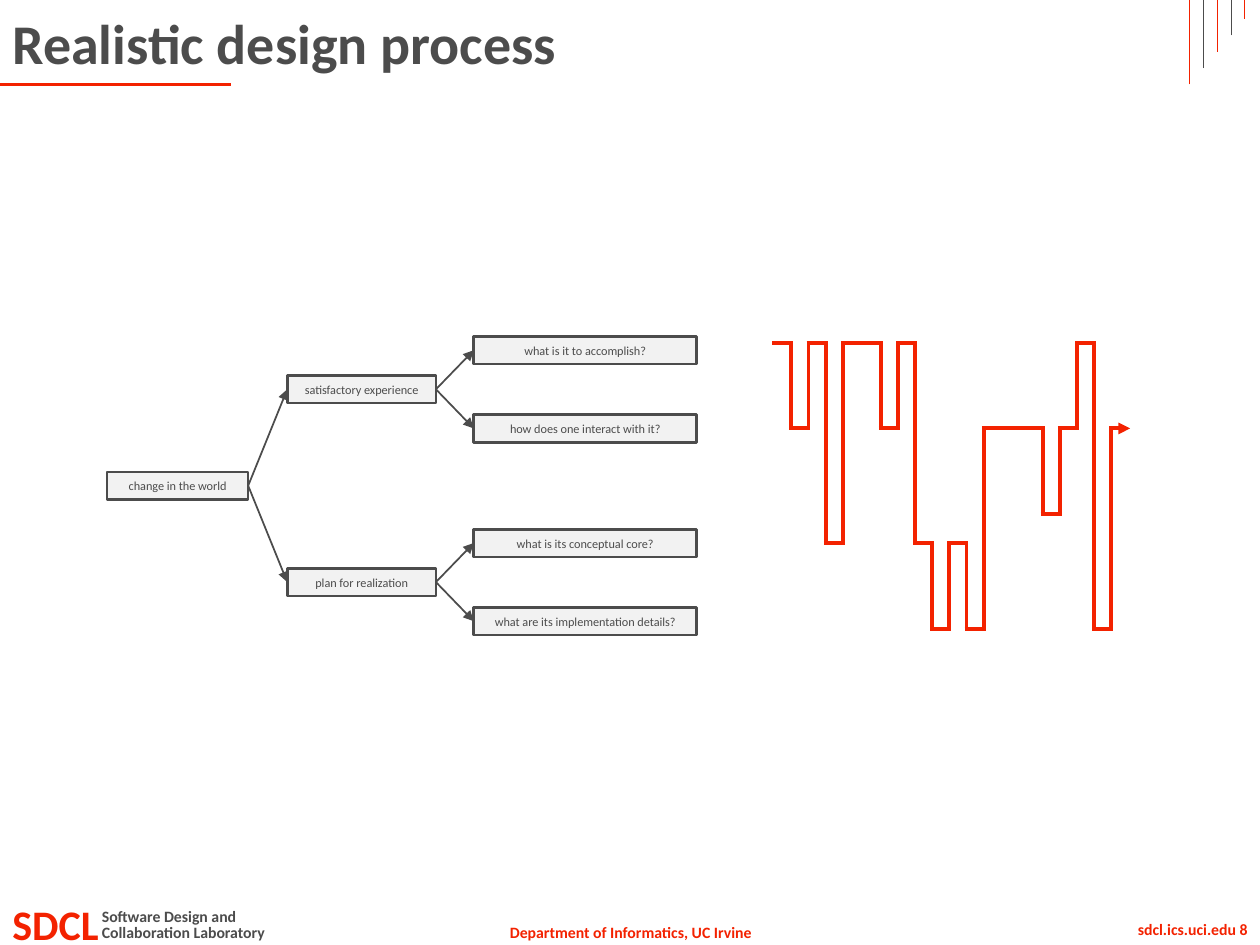
from lxml import etree
from pptx import Presentation
from pptx.dml.color import RGBColor
from pptx.enum.shapes import MSO_CONNECTOR, MSO_SHAPE
from pptx.enum.text import MSO_ANCHOR, MSO_AUTO_SIZE, PP_ALIGN
from pptx.oxml.ns import qn
from pptx.util import Inches, Pt

LEFT, CENTER, RIGHT = PP_ALIGN.LEFT, PP_ALIGN.CENTER, PP_ALIGN.RIGHT
MIDDLE, TOP = MSO_ANCHOR.MIDDLE, MSO_ANCHOR.TOP
STRAIGHT, RECTANGLE = MSO_CONNECTOR.STRAIGHT, MSO_SHAPE.RECTANGLE
GROW = MSO_AUTO_SIZE.SHAPE_TO_FIT_TEXT
LEFT_SIDE, RIGHT_SIDE = 1, 3

COLORS = {"red": "F32200", "gray": "4C4C4C", "pale": "F2F2F2"}
FONT = "Calibri"

# text, (left, top, width, height), size, color, alignment, anchor, wrap
LABELS = [
    ("Department of Informatics, UC Irvine", (3.93, 7.27, 2.15, 0.25), 9, "red", CENTER, TOP, False),
    ("SDCL", (0, 7.08, 1, 0.5), 24, "red", LEFT, TOP, True),
    ("Collaboration Laboratory", (0.71, 7.27, 1.53, 0.25), 9, "gray", LEFT, TOP, False),
    ("Software Design and", (0.71, 7.15, 1.29, 0.25), 9, "gray", LEFT, TOP, False),
    ("sdcl.ics.uci.edu 8", (7.84, 7.25, 2.16, 0.25), 9, "red", RIGHT, TOP, True),
    ("Realistic design process", (0, 0, 9, 0.67), 32, "gray", LEFT, MIDDLE, True),
]

CORNER_COLORS = ["red", "gray", "red", "gray", "red"]
CORNER_LEFT, CORNER_GAP = 9.44, 0.11
CORNER_HEIGHT, CORNER_DROP = 0.67, 0.13

# Each node is (text, children); each leaf has its top in LEAF_TOPS
DESIGN_TREE = ("change in the world", [
    ("satisfactory experience", [
        ("what is it to accomplish?", []),
        ("how does one interact with it?", []),
    ]),
    ("plan for realization", [
        ("what is its conceptual core?", []),
        ("what are its implementation details?", []),
    ]),
])
LEAF_TOPS = [2.67, 3.29, 4.2, 4.82]
TREE_COLUMNS = [(0.85, 1.12), (2.28, 1.18), (3.76, 1.77)]  # left, width
NODE_HEIGHT = 0.22

# Where the designer's attention is, step by step
LEVELS = {"goal": 2.72, "interaction": 3.4, "between": 4.08, "core": 4.31, "details": 4.99}
JOURNEY = [
    "goal", "interaction", "goal", "core", "goal", "goal", "interaction", "goal",
    "core", "details", "core", "details", "interaction", "interaction", "interaction",
    "between", "interaction", "goal", "details", "interaction",
]
JOURNEY_LEFT, JOURNEY_WIDTH, OVERLAP = 6.13, 2.84, 0.03


def rgb(name):
    return RGBColor.from_string(COLORS[name])


def write(shape, text, size, color, align, anchor, wrap, bold):
    frame = shape.text_frame
    frame_format = {"word_wrap": wrap, "auto_size": GROW, "vertical_anchor": anchor}
    for key, value in frame_format.items():
        setattr(frame, key, value)
    paragraph = frame.paragraphs[0]
    paragraph.alignment = align
    run = paragraph.add_run()
    run.text = text
    for key, value in {"name": FONT, "size": Pt(size), "bold": bold}.items():
        setattr(run.font, key, value)
    run.font.color.rgb = rgb(color)


def add_line(slide, start, end, color, width, arrow=False):
    line = slide.shapes.add_connector(STRAIGHT, *map(Inches, (*start, *end)))
    line.line.color.rgb = rgb(color)
    line.line.width = Pt(width)
    if arrow:
        etree.SubElement(line.line._get_or_add_ln(), qn("a:tailEnd"), type="triangle")
    etree.SubElement(line._element.spPr, qn("a:effectLst"))
    return line


def add_labels(slide):
    for text, place, size, color, align, anchor, wrap in LABELS:
        box = slide.shapes.add_textbox(*map(Inches, place))
        write(box, text, size, color, align, anchor, wrap, True)


def add_decoration(slide):
    add_line(slide, (0, 0.67), (1.83, 0.67), "red", 1.5)
    for i, color in enumerate(CORNER_COLORS):
        x = CORNER_LEFT + i * CORNER_GAP
        add_line(slide, (x, CORNER_HEIGHT - i * CORNER_DROP), (x, 0), color, 0.5)


def add_node(slide, node, leaf_tops, depth=0):
    """Draw a node midway between its first and last child; return box and top."""
    text, children = node
    branches = [add_node(slide, child, leaf_tops, depth + 1) for child in children]
    top = (branches[0][1] + branches[-1][1]) / 2 if branches else next(leaf_tops)
    left, width = TREE_COLUMNS[depth]
    box = slide.shapes.add_shape(RECTANGLE, *map(Inches, (left, top, width, NODE_HEIGHT)))
    box.shadow.inherit = False
    box.fill.solid()
    box.fill.fore_color.rgb = rgb("pale")
    box.line.color.rgb = rgb("gray")
    box.line.width = Pt(1.5)
    write(box, text, 7, "gray", CENTER, MIDDLE, True, False)
    for child_box, _ in branches:
        arrow = add_line(slide, (0, 0), (1, 1), "gray", 1, arrow=True)
        arrow.begin_connect(box, RIGHT_SIDE)
        arrow.end_connect(child_box, LEFT_SIDE)
    return box, top


def add_journey(slide):
    """Draw equal level strokes, overlapping by a line width where the level changes."""
    heights = [LEVELS[name] for name in JOURNEY]
    changes = sum(a != b for a, b in zip(heights, heights[1:]))
    stroke = (JOURNEY_WIDTH + changes * OVERLAP) / len(heights)
    x, previous = JOURNEY_LEFT, heights[0]
    for i, y in enumerate(heights):
        if y != previous:
            x -= OVERLAP
            riser = x + OVERLAP / 2
            add_line(slide, (riser, min(previous, y)), (riser, max(previous, y)), "red", 2.25)
        add_line(slide, (x, y), (x + stroke, y), "red", 2.25, arrow=i == len(heights) - 1)
        x, previous = x + stroke, y


def main():
    deck = Presentation()
    deck.slide_width, deck.slide_height = Inches(10), Inches(7.5)
    slide = deck.slides.add_slide(deck.slide_layouts[6])
    add_decoration(slide)
    add_labels(slide)
    add_node(slide, DESIGN_TREE, iter(LEAF_TOPS))
    add_journey(slide)
    deck.save("out.pptx")


if __name__ == "__main__":
    main()
